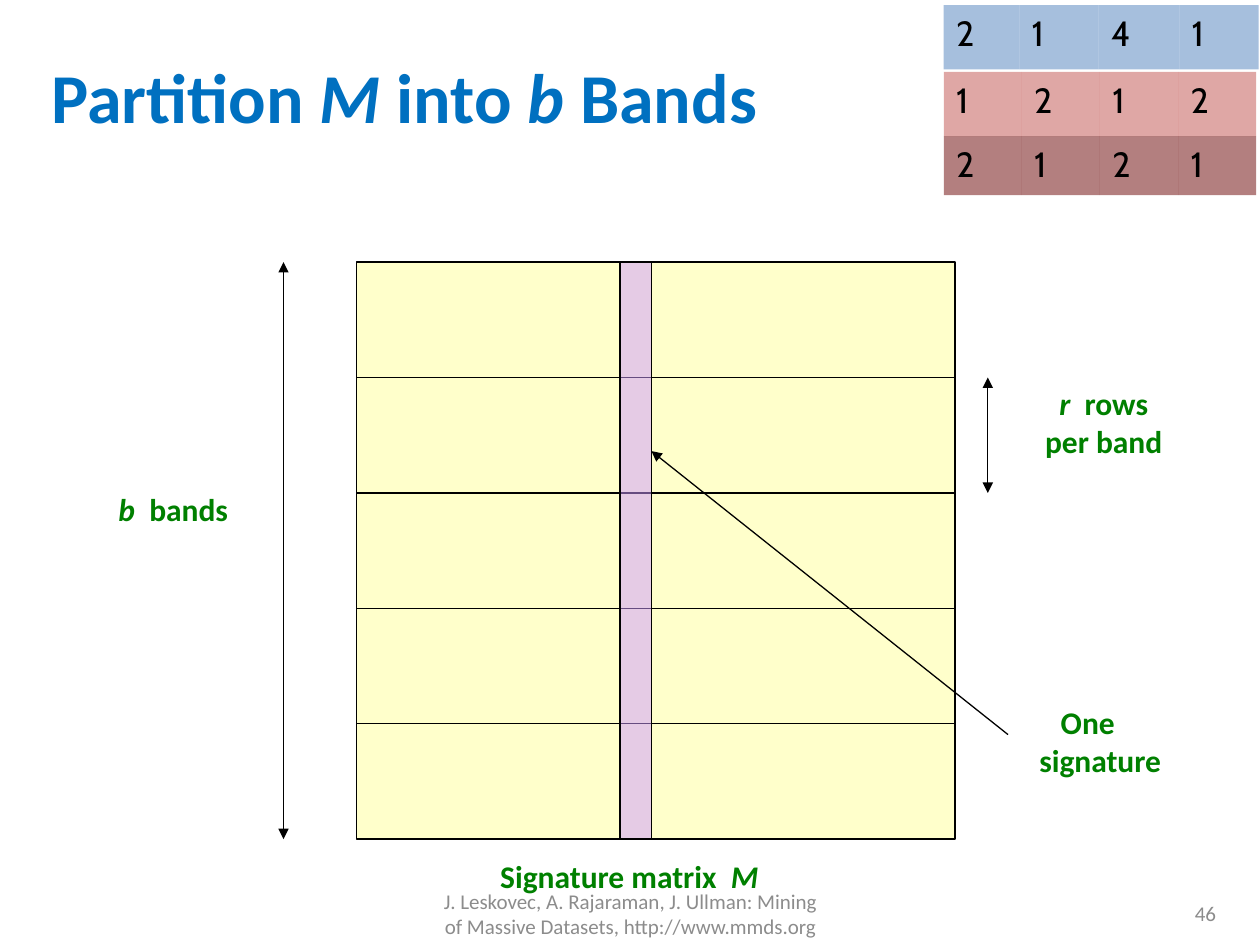
from dataclasses import dataclass
from itertools import pairwise

from lxml import etree
from pptx import Presentation
from pptx.dml.color import RGBColor
from pptx.enum import shapes, text
from pptx.oxml.ns import qn
from pptx.util import Inches, Pt

BLACK, GREEN, GRAY, BLUE = "000000", "008000", "8C8C8C", "0070C0"
LEFT, CENTER, RIGHT = text.PP_ALIGN.LEFT, text.PP_ALIGN.CENTER, text.PP_ALIGN.RIGHT
Run = tuple[str, bool]  # wording, italic


@dataclass
class Label:
    left: float
    top: float
    width: float
    height: float
    lines: list[list[Run]]
    align: text.PP_ALIGN = CENTER
    size: int = 18
    color: str = GREEN
    bold: bool = True
    wrap: bool = False
    anchor: text.MSO_ANCHOR = text.MSO_ANCHOR.TOP


@dataclass
class SignatureRow:
    top: float
    height: float
    color: str
    edges: tuple[float, ...]
    values: str


@dataclass
class Line:
    start: tuple[float, float]
    end: tuple[float, float]
    heads: tuple[str, ...] = ()


def rgb(color: str) -> RGBColor:
    return RGBColor.from_string(color)


def style_paragraph(paragraph, runs: list[Run], size: int, color: str,
                    bold: bool, align=LEFT, face: str = "Calibri") -> None:
    paragraph.alignment = align
    font = paragraph.font
    font.name, font.size, font.bold = face, Pt(size), bold
    font.color.rgb = rgb(color)
    for wording, italic in runs:
        run = paragraph.add_run()
        run.text = wording
        if italic:
            run.font.italic = True


def add_label(slide, label: Label):
    box = slide.shapes.add_textbox(Inches(label.left), Inches(label.top),
                                   Inches(label.width), Inches(label.height))
    frame = box.text_frame
    frame.word_wrap = label.wrap
    frame.vertical_anchor = label.anchor
    for i, runs in enumerate(label.lines):
        paragraph = frame.add_paragraph() if i else frame.paragraphs[0]
        style_paragraph(paragraph, runs, label.size, label.color, label.bold, label.align)
    return frame


def add_rect(slide, left: float, top: float, width: float, height: float,
             fill: str, alpha: int = 100, outlined: bool = False):
    rect = slide.shapes.add_shape(shapes.MSO_SHAPE.RECTANGLE, Inches(left), Inches(top),
                                  Inches(width), Inches(height))
    rect.shadow.inherit = False
    rect.fill.solid()
    rect.fill.fore_color.rgb = rgb(fill)
    if alpha < 100:
        color = rect.fill._xPr.find(qn("a:solidFill"))[0]
        etree.SubElement(color, qn("a:alpha"), val=str(alpha * 1000))
    if outlined:
        rect.line.color.rgb = rgb(BLACK)
        rect.line.width = Pt(0.75)
    else:
        rect.line.fill.background()
    return rect


def add_line(slide, line: Line) -> None:
    connector = slide.shapes.add_connector(shapes.MSO_CONNECTOR.STRAIGHT,
                                           *map(Inches, line.start + line.end))
    connector.line.color.rgb = rgb(BLACK)
    connector.line.width = Pt(0.75)
    outline = connector.line._get_or_add_ln()
    for head in line.heads:
        etree.SubElement(outline, qn(f"a:{head}"), type="triangle")
    etree.SubElement(connector._element.spPr, qn("a:effectLst"))


def add_signature_row(slide, row: SignatureRow) -> None:
    for value, (left, right) in zip(row.values, pairwise(row.edges)):
        cell = add_rect(slide, left, row.top, right - left, row.height, row.color, 50)
        cell.text_frame.vertical_anchor = text.MSO_ANCHOR.TOP
        style_paragraph(cell.text_frame.paragraphs[0], [(value, False)], 20, BLACK,
                        False, face="Cabin")


def main() -> None:
    prs = Presentation()
    prs.slide_width, prs.slide_height = Inches(10), Inches(7.5)
    slide = prs.slides.add_slide(prs.slide_layouts[5])

    # Title
    title = slide.shapes.title
    title.left, title.top = Inches(0.31), Inches(0.32)
    title.width, title.height = Inches(9.46), Inches(0.88)
    title.text_frame.auto_size = text.MSO_AUTO_SIZE.NONE
    title.text_frame.vertical_anchor = text.MSO_ANCHOR.MIDDLE
    style_paragraph(title.text_frame.paragraphs[0],
                    [("Partition ", False), ("M", True), (" into ", False),
                     ("b", True), (" Bands", False)], 40, BLUE, True)

    # Footer and slide number
    credit = ("J. Leskovec, A. Rajaraman, J. Ullman: Mining of Massive Datasets, "
              "http://www.mmds.org")
    for left, width, wording, align in ((3.42, 3.17, credit, CENTER),
                                        (7.42, 2.33, "46", RIGHT)):
        add_label(slide, Label(left, 7.05, width, 0.4, [[(wording, False)]], align, 12,
                               GRAY, False, True, text.MSO_ANCHOR.MIDDLE))

    # Matrix M, split into equal bands
    left, top, width, height, bands = 2.83, 2.08, 4.75, 4.58, 5
    right, bottom, band = left + width, top + height, height / bands
    add_rect(slide, left, top, width, height, "FFFF99", 50, True)
    for i in range(1, bands):
        add_line(slide, Line((left, top + i * band), (right, top + i * band)))

    # One signature column
    column_left, column_width = 4.92, 0.25
    add_rect(slide, column_left, top, column_width, height, "CC99FF", 50, True)

    # Dimension arrows and pointer to the signature
    both = ("headEnd", "tailEnd")
    for line in (Line((7.84, top + band), (7.84, top + 2 * band), both),
                 Line((2.25, top), (2.25, bottom), both),
                 Line((8, 5.83), (column_left + column_width, 3.58), ("tailEnd",))):
        add_line(slide, line)

    # Labels
    for label in (
        Label(3.82, 6.75, 2.35, 0.4, [[("Signature matrix ", False), (" M", True)]]),
        Label(8.18, 3, 1.16, 0.71, [[("r ", True), (" rows", False)],
                                    [("per band", False)]]),
        Label(0.83, 3.84, 1.09, 0.4, [[("b ", True), (" bands", False)]]),
    ):
        add_label(slide, label)
    signature = add_label(slide, Label(8.15, 5.53, 1.22, 0.7, [[("One", False)],
                                                              [("signature", False)]], LEFT))
    one = signature.paragraphs[0]._p.get_or_add_pPr()
    one.set("marL", str(Inches(0.17)))
    one.set("indent", "0")

    # Example signature matrix in the corner
    add_rect(slide, 7.42, 0, 2.58, 1.58, "FFFFFF")
    even_edges = tuple(7.49 + 0.62 * i for i in range(5))
    for row in (
        SignatureRow(1.08, 0.47, "680000", even_edges, "2121"),
        SignatureRow(0.04, 0.51, "4F81BD", (7.49, 8.09, 8.72, 9.36, 9.99), "2141"),
        SignatureRow(0.57, 0.51, "C0504D", even_edges, "1212"),
    ):
        add_signature_row(slide, row)

    prs.save("out.pptx")


if __name__ == "__main__":
    main()
